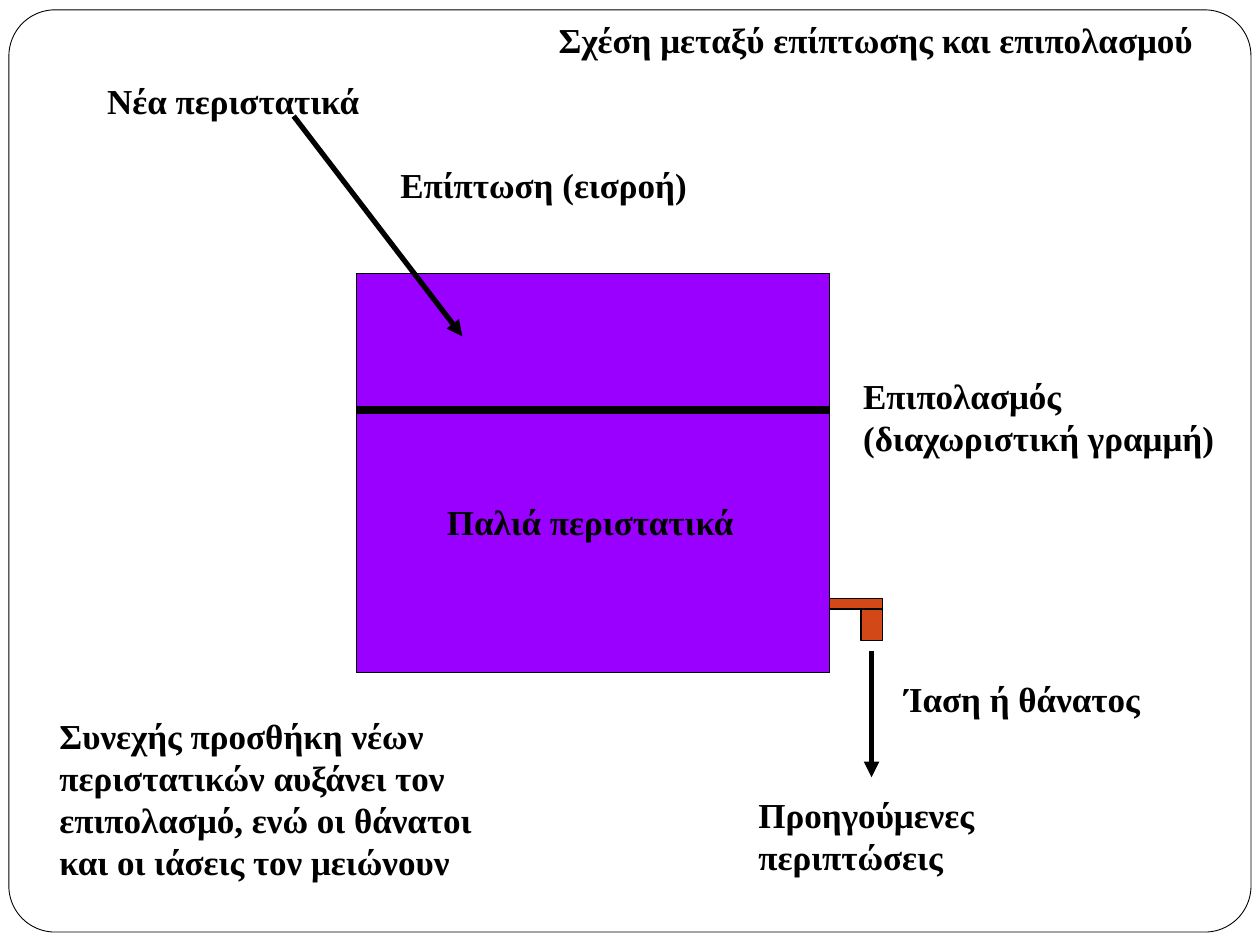
"""Build a slide on the relation between incidence and prevalence."""
import pptx
import pptx.dml.color
import pptx.enum.shapes
import pptx.enum.text
import pptx.oxml.ns
import pptx.util
from lxml import etree

Cm = pptx.util.Cm
Pt = pptx.util.Pt
RGBColor = pptx.dml.color.RGBColor
Shape = pptx.enum.shapes.MSO_SHAPE
Align = pptx.enum.text.PP_ALIGN

BLACK = RGBColor(0x00, 0x00, 0x00)
WHITE = RGBColor(0xFF, 0xFF, 0xFF)
PURPLE = RGBColor(0x99, 0x00, 0xFF)
RUST = RGBColor(0xD3, 0x48, 0x17)


class Diagram:
    font_name = "Times New Roman"
    font_size = Pt(20)

    def __init__(self, slide):
        self.slide = slide

    def block(self, left, top, width, height, fill, line=0.75, kind=Shape.RECTANGLE):
        shape = self.slide.shapes.add_shape(kind, Cm(left), Cm(top), Cm(width), Cm(height))
        shape.shadow.inherit = False
        shape.fill.solid()
        shape.fill.fore_color.rgb = fill
        shape.line.color.rgb = BLACK
        shape.line.width = Pt(line)
        return shape

    def line(self, x1, y1, x2, y2, width, arrow=False):
        connector = self.slide.shapes.add_connector(
            pptx.enum.shapes.MSO_CONNECTOR.STRAIGHT, Cm(x1), Cm(y1), Cm(x2), Cm(y2))
        connector.line.color.rgb = BLACK
        connector.line.width = Pt(width)
        properties = connector.element.spPr
        if arrow:
            outline = properties.find(pptx.oxml.ns.qn("a:ln"))
            etree.SubElement(outline, pptx.oxml.ns.qn("a:tailEnd"), type="triangle")
        etree.SubElement(properties, pptx.oxml.ns.qn("a:effectLst"))

    def set_text(self, box, text, align):
        frame = box.text_frame
        frame.text = text
        frame.word_wrap = True
        frame.auto_size = pptx.enum.text.MSO_AUTO_SIZE.SHAPE_TO_FIT_TEXT
        frame.vertical_anchor = pptx.enum.text.MSO_ANCHOR.TOP
        para = frame.paragraphs[0]
        para.alignment = align
        for span in para.runs:
            span.font.name = self.font_name
            span.font.size = self.font_size
            span.font.bold = True
            span.font.color.rgb = BLACK

    def label(self, left, top, width, height, text, align=Align.LEFT):
        box = self.slide.shapes.add_textbox(Cm(left), Cm(top), Cm(width), Cm(height))
        self.set_text(box, text, align)

    def title(self, left, top, width, height, text):
        box = self.slide.shapes.title
        box.left, box.top, box.width, box.height = Cm(left), Cm(top), Cm(width), Cm(height)
        self.set_text(box, text, Align.RIGHT)
        box.element.getparent().append(box.element)


def main():
    deck = pptx.Presentation()
    deck.slide_width, deck.slide_height = Cm(25.4), Cm(19.05)
    page = Diagram(deck.slides.add_slide(deck.slide_layouts[5]))

    border = page.block(0.18, 0.2, 25.04, 18.59, WHITE, 0.5, Shape.ROUNDED_RECTANGLE)
    border.adjustments[0] = 0.05
    page.title(4.62, 0.25, 19.69, 1.09, "Σχέση μεταξύ επίπτωσης και επιπολασμού")

    tank_left, tank_right = 7.19, 16.72
    page.block(tank_left, 5.51, tank_right - tank_left, 8.05, PURPLE)
    page.line(tank_left, 8.26, tank_right, 8.26, 4.5)
    page.block(tank_right, 12.07, 1.07, 0.21, RUST)
    page.block(17.36, 12.28, 0.43, 0.64, RUST)
    page.line(5.92, 2.34, 9.32, 6.78, 3, arrow=True)
    page.line(17.57, 13.13, 17.57, 15.67, 3, arrow=True)

    page.label(8.71, 9.96, 6.38, 1.96, "Παλιά περιστατικά ", Align.CENTER)
    for label in (
        (1.91, 1.47, 5.92, 1.96, "Νέα περιστατικά"),
        (17.15, 7.42, 8.25, 2.79, "Επιπολασμός (διαχωριστική γραμμή)"),
        (7.82, 3.18, 8.25, 1.09, "Επίπτωση (εισροή)"),
        (17.98, 13.54, 6.99, 1.09, "Ίαση ή θάνατος"),
        (15.04, 15.88, 8.66, 1.96, "Προηγούμενες περιπτώσεις"),
        (0.95, 14.27, 9.96, 4.5, "Συνεχής προσθήκη νέων περιστατικών αυξάνει τον "
                                 "επιπολασμό, ενώ οι θάνατοι και οι ιάσεις τον μειώνουν"),
    ):
        page.label(*label)
    deck.save("out.pptx")


if __name__ == "__main__":
    main()
